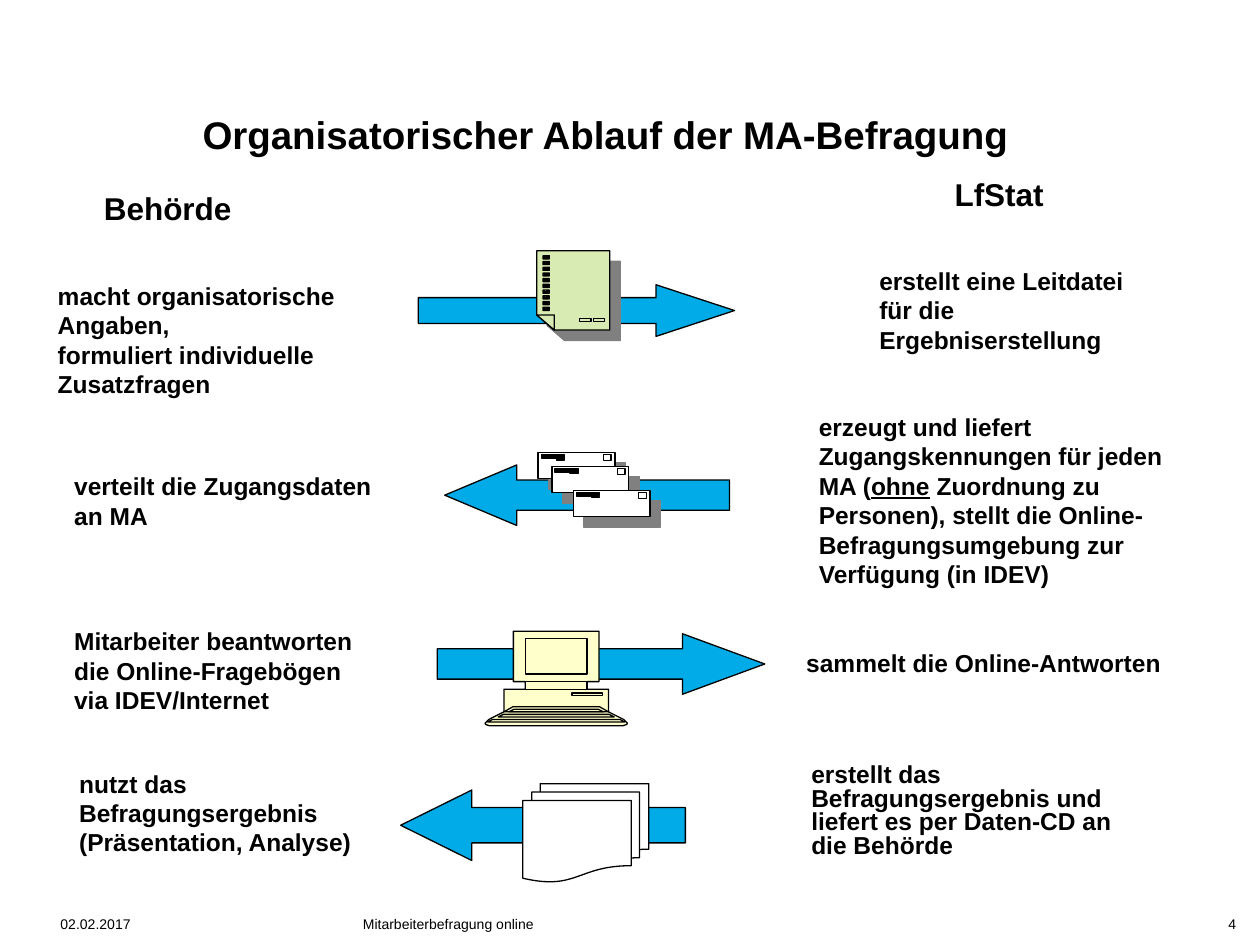
"""Build the slide on the organisation of the staff survey."""
from copy import deepcopy
from dataclasses import dataclass

from lxml import etree
from pptx import Presentation
from pptx.dml.color import RGBColor
from pptx.enum.shapes import MSO_SHAPE
from pptx.enum.text import MSO_ANCHOR, PP_ALIGN
from pptx.oxml.ns import qn
from pptx.util import Inches, Pt

RIGHT, LEFT = MSO_SHAPE.RIGHT_ARROW, MSO_SHAPE.LEFT_ARROW
DOCUMENTS = MSO_SHAPE.FLOWCHART_MULTIDOCUMENT
ALIGN = {"l": PP_ALIGN.LEFT, "c": PP_ALIGN.CENTER, "r": PP_ALIGN.RIGHT}
TOP, MIDDLE = MSO_ANCHOR.TOP, MSO_ANCHOR.MIDDLE
CELL = Inches(0.1)
COLUMNS, ROWS = 100, 75
INSETS = (1, 0.5, 1, 0.5)


@dataclass(frozen=True)
class Theme:
    """Colours and type sizes of the slide."""

    font: str = "Arial"
    ink: str = "000000"
    arrow: str = "00ABE8"
    note: str = "D8EBB3"
    paper: str = "FFFFFF"
    computer: str = "FFFFCC"
    shadow: str = "808080"
    line: float = 0.75
    title: int = 22
    heading: int = 18
    body: int = 14
    footer: int = 8


THEME = Theme()


def cells(*values):
    """Turn grid cells into slide lengths."""
    return [round(v * CELL) for v in values]


def rect(x, y, w, h):
    """Return the corners of a rectangle."""
    return [(x, y), (x + w, y), (x + w, y + h), (x, y + h)]


def add_text(s, box, paragraphs, size, bold=True, align="l", spacing=None,
             insets=INSETS, anchor=TOP):
    """Add a text box; each paragraph is a list of (text, underlined) runs or a string."""
    tf = s.shapes.add_textbox(*cells(*box)).text_frame
    tf.word_wrap = True
    tf.vertical_anchor = anchor
    tf.margin_left, tf.margin_top, tf.margin_right, tf.margin_bottom = cells(*insets)
    for i, runs in enumerate(paragraphs):
        p = tf.add_paragraph() if i else tf.paragraphs[0]
        for text, underlined in [(runs, False)] if isinstance(runs, str) else runs:
            r = p.add_run()
            r.text = text
            if underlined:
                r.font.underline = True
        p.alignment = ALIGN[align]
        if spacing:
            p.line_spacing = spacing
        p.font.name, p.font.size, p.font.bold = THEME.font, Pt(size), bold
        p.font.color.rgb = RGBColor.from_string(THEME.ink)
    return tf


def paint(sp, color):
    """Give a shape its fill and outline, without a shadow."""
    sp.shadow.inherit = False
    sp.fill.solid()
    sp.fill.fore_color.rgb = RGBColor.from_string(color)
    sp.line.color.rgb = RGBColor.from_string(THEME.ink)
    sp.line.width = Pt(THEME.line)


def add_preset(shapes, kind, box, color, head=None):
    """Add a preset shape; head is the arrowhead's length relative to the height."""
    sp = shapes.add_shape(kind, *cells(*box))
    paint(sp, color)
    if head:
        sp.adjustments[0], sp.adjustments[1] = 0.5, head


def drop_shadow(sp):
    """Cast a hard shadow to the lower right."""
    effects = sp.element.spPr.find(qn("a:effectLst"))
    shadow = etree.SubElement(effects, qn("a:outerShdw"), dist=str(Pt(8.5)),
                              dir="2700000", algn="ctr", rotWithShape="0")
    etree.SubElement(shadow, qn("a:srgbClr"), val=THEME.shadow)


def split_outlines(sp):
    """Let each outline of a freeform be filled on its own."""
    joined = sp.element.find(".//" + qn("a:path"))
    steps = list(joined)
    for step in steps:
        joined.remove(step)
    blank, part = deepcopy(joined), joined
    for i, step in enumerate(steps):
        if i and step.tag == qn("a:moveTo"):
            following = deepcopy(blank)
            part.addnext(following)
            part = following
        part.append(step)


def add_outlines(shapes, outlines, color, shadow=False):
    """Add one freeform made of several closed outlines."""
    scaled = [[cells(*point) for point in outline] for outline in outlines]
    builder = shapes.build_freeform(*scaled[0][0])
    for i, (start, *rest) in enumerate(scaled):
        if i:
            builder.move_to(*start)
        builder.add_line_segments(rest, close=True)
    sp = builder.convert_to_shape()
    split_outlines(sp)
    paint(sp, color)
    if shadow:
        drop_shadow(sp)


def add_note(shapes, x, y):
    """Add a questionnaire with a folded corner and ten ticked lines."""
    sheet = [(x, y), (x + 5.8, y), (x + 5.8, y + 6.3), (x + 1.4, y + 6.3), (x, y + 5.1)]
    fold = [(x, y + 5.1), (x + 1.4, y + 5.1), (x + 1.4, y + 6.3)]
    buttons = [rect(x + dx, y + 5.4, 0.9, 0.2) for dx in (3.4, 4.5)]
    tick = [(0, 0), (0.5, 0), (0.2, 0.15), (0.1, 0.1), (0, 0.1),
            (0.2, 0.25), (0.5, 0.05), (0.5, 0.25), (0, 0.25)]
    ticks = [[(x + 0.5 + dx, y + 0.4 + 0.455 * i + dy) for dx, dy in tick]
             for i in range(10)]
    add_outlines(shapes, [sheet, fold, *buttons, *ticks], THEME.note, shadow=True)


def add_envelope(shapes, x, y):
    """Add an envelope with a stamp and a sender."""
    sender = [rect(x + 0.25, y + 0.2 + 0.1 * i, 1.85, 0.1) for i in range(3)]
    add_outlines(shapes, [rect(x, y, 6.1, 2.1), rect(x + 5.2, y + 0.2, 0.6, 0.45),
                          *sender, rect(x + 1.45, y + 0.5, 0.65, 0.1)],
                 THEME.paper, shadow=True)


def add_computer(shapes, mid, y):
    """Add a computer that is symmetric about mid."""
    def mirrored(*half):
        """Complete a right half, given from top to bottom."""
        return ([(mid + dx, y + dy) for dx, dy in half]
                + [(mid - dx, y + dy) for dx, dy in reversed(half)])

    body = mirrored((3.4, 0), (3.4, 4), (2.45, 4), (2.45, 4.6), (4.15, 4.6), (4.15, 6.4),
                    (5.35, 7), (5.65, 7.3), (5.6, 7.4), (5.3, 7.5))
    keys = [mirrored((3.35 + 0.85 * i, 6.2 + 0.4 * i), (3.75 + 0.85 * i, 6.4 + 0.4 * i))
            for i in range(3)]
    keyboard = mirrored((3.45, 6), (4.15, 6.4))
    add_outlines(shapes, [body, keyboard, *keys, rect(mid + 1.25, y + 4.9, 2.4, 0.2),
                          rect(mid - 2.45, y + 0.6, 4.9, 2.8),
                          rect(mid - 2.45, y + 4, 4.9, 0.6)], THEME.computer)


def add_headings(s):
    """Add the title, the two column headings and the footer."""
    add_text(s, (4.6, 8.4, 87.1, 4.5), ["Organisatorischer Ablauf der MA-Befragung"],
             THEME.title, align="c", insets=(0, 0.5, 0.2, 0.5), anchor=MIDDLE)
    tf = add_text(s, (4.7, 15.1, 18.2, 4.4), ["Behörde"], THEME.heading, align="c",
                  spacing=0.8, insets=(0, 0.5, 1, 0.5))
    pPr = tf.paragraphs[0]._p.get_or_add_pPr()
    pPr.set("marL", str(5 * CELL))
    pPr.set("indent", str(-5 * CELL))
    add_text(s, (71.7, 14, 15.2, 6.4), ["LfStat"], THEME.heading, align="c", spacing=0.8)
    for x, w, text, align, insets in (
            (4.8, 23.3, "02.02.2017", "l", (0, 0.5, 0.2, 0.5)),
            (28.8, 42.4, "Mitarbeiterbefragung online", "l", (0, 0.5, 2, 0.5)),
            (94.4, 3.7, "4", "r", (0.2, 0.5, 0, 0.5))):
        add_text(s, (x, 72.2, w, 1.4), [text], THEME.footer, False, align, insets=insets)


def add_steps(s):
    """Add what each side does in every step."""
    for box, paragraphs, spacing in (
            ((3.6, 21.8, 25.2, 10.3), ["macht organisatorische Angaben,",
                                       "formuliert individuelle Zusatzfragen"], None),
            ((68.8, 20.6, 23.8, 8),
             ["erstellt eine Leitdatei für die Ergebniserstellung"], None),
            ((4.9, 36.9, 26.1, 5.7), ["verteilt die Zugangsdaten", "an MA"], None),
            ((64, 32.2, 31, 15),
             [[("erzeugt und liefert Zugangskennungen für jeden MA (", False),
               ("ohne", True),
               (" Zuordnung zu Personen), stellt die Online-Befragungsumgebung "
                "zur Verfügung (in IDEV)", False)]], None),
            ((4.9, 49.2, 26.4, 8),
             ["Mitarbeiter beantworten die Online-Fragebögen via IDEV/Internet"], None),
            ((63, 51.4, 30.8, 2.9), ["sammelt die Online-Antworten"], 0.8),
            ((5.3, 60.5, 26.6, 11.5),
             ["nutzt das Befragungsergebnis (Präsentation, Analyse)"], None),
            ((63.4, 60.2, 26.8, 8.4), ["erstellt das Befragungsergebnis und liefert es "
                                       "per Daten-CD an die Behörde"], 0.8)):
        add_text(s, box, paragraphs, THEME.body, spacing=spacing)


def add_flows(s):
    """Add the four arrows and what they carry."""
    survey = s.shapes.add_group_shape().shapes
    add_preset(survey, RIGHT, (33.2, 22.6, 25.1, 4.1), THEME.arrow, 1.52)
    add_note(survey, 42.6, 19.9)
    mail = s.shapes.add_group_shape().shapes
    add_preset(mail, LEFT, (35.3, 36.9, 22.6, 4.8), THEME.arrow, 1.19)
    for x, y in ((42.7, 35.9), (43.8, 37), (45.5, 38.9)):
        add_envelope(mail, x, y)
    add_preset(s.shapes, RIGHT, (34.7, 50.3, 26, 4.8), THEME.arrow, 1.36)
    add_computer(s.shapes, 44.15, 50.1)
    add_preset(s.shapes, LEFT, (31.8, 62.7, 22.6, 5.6), THEME.arrow, 1.01)
    add_preset(s.shapes, DOCUMENTS, (41.5, 62.2, 10, 7.8), THEME.paper)


def main():
    """Build and save the slide."""
    prs = Presentation()
    prs.slide_width, prs.slide_height = cells(COLUMNS, ROWS)
    s = prs.slides.add_slide(prs.slide_layouts[6])
    add_headings(s)
    add_steps(s)
    add_flows(s)
    prs.save("out.pptx")


if __name__ == "__main__":
    main()
